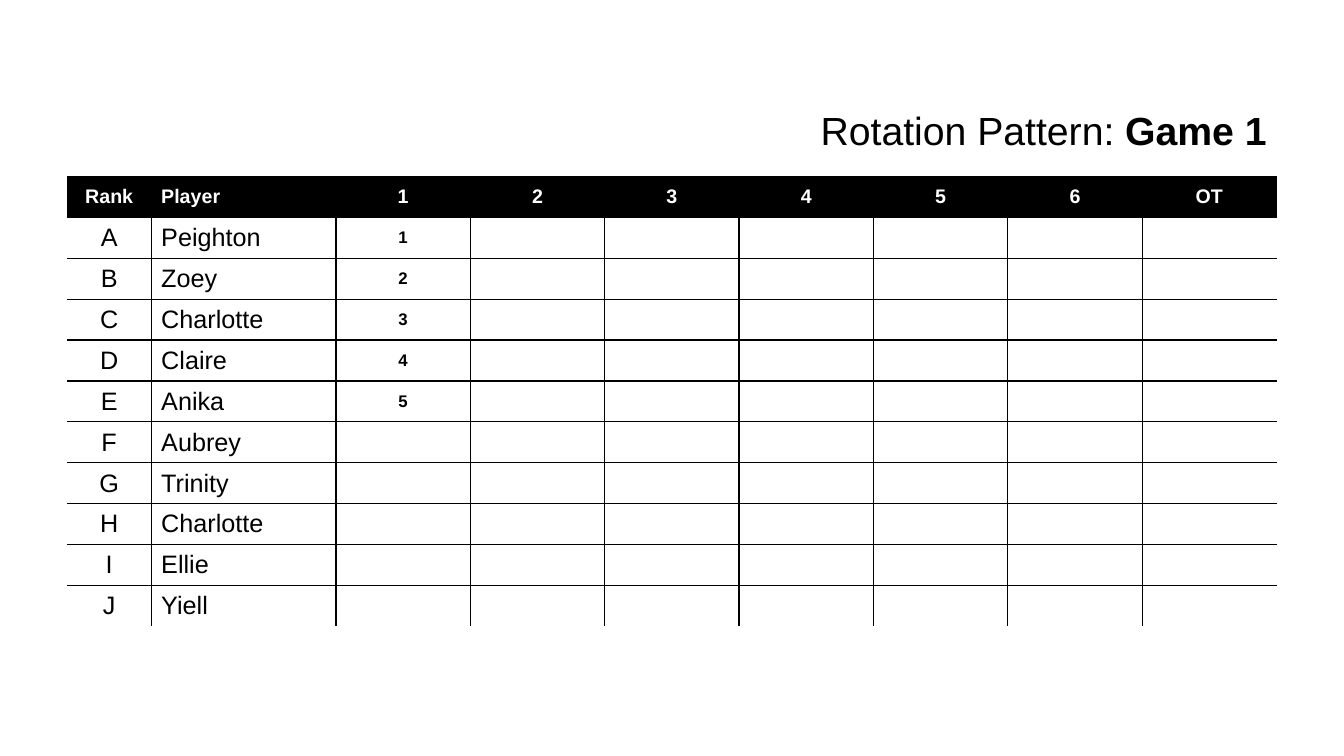
from lxml import etree
from pptx import Presentation
from pptx.dml.color import RGBColor
from pptx.enum.text import MSO_ANCHOR, MSO_AUTO_SIZE, PP_ALIGN
from pptx.oxml.ns import qn
from pptx.util import Emu, Pt

PX = 9525
FONT = "Arial"
COLORS = {"ink": "000000", "paper": "FFFFFF"}
LEFT, CENTER, RIGHT = PP_ALIGN.LEFT, PP_ALIGN.CENTER, PP_ALIGN.RIGHT
TOP, MIDDLE = MSO_ANCHOR.TOP, MSO_ANCHOR.MIDDLE
GROW = MSO_AUTO_SIZE.SHAPE_TO_FIT_TEXT

HEADERS = ["Rank", "Player", "1", "2", "3", "4", "5", "6", "OT"]
PLAYERS = ["Peighton", "Zoey", "Charlotte", "Claire", "Anika",
           "Aubrey", "Trinity", "Charlotte", "Ellie", "Yiell"]
RANKS = "ABCDEFGHIJ"
STARTERS = 5
COL_WIDTHS = [80, 176] + [128] * 7
ROW_HEIGHT = 39


def px(n):
    return Emu(n * PX)


def rgb(name):
    return RGBColor.from_string(COLORS[name])


def style_paragraph(p, size, color, bold, align):
    p.alignment = align
    p.font.name = FONT
    p.font.size = Pt(size)
    p.font.bold = bold
    p.font.color.rgb = rgb(color)


def add_title(s, label, game):
    title = s.shapes.title
    title.left, title.top, title.width, title.height = map(px, (376, 96, 840, 55))
    tf = title.text_frame
    tf.word_wrap = True
    tf.auto_size = GROW
    tf.vertical_anchor = TOP
    p = tf.paragraphs[0]
    style_paragraph(p, 28, "ink", False, RIGHT)
    p.add_run().text = label
    r = p.add_run()
    r.text = game
    r.font.bold = True


def set_borders(cell, inner_sides):
    tc_pr = cell._tc.get_or_add_tcPr()
    for i, side in enumerate("LRTB"):
        ln = etree.Element(qn(f"a:ln{side}"), w=str(Pt(1)))
        if side in inner_sides:
            fill = etree.SubElement(ln, qn("a:solidFill"))
            etree.SubElement(fill, qn("a:srgbClr"), val=COLORS["ink"])
        else:
            etree.SubElement(ln, qn("a:noFill"))
        tc_pr.insert(i, ln)


def fill_cell(cell, text, size, color, bold, align, background):
    cell.vertical_anchor = MIDDLE
    cell.fill.solid()
    cell.fill.fore_color.rgb = rgb(background)
    p = cell.text_frame.paragraphs[0]
    if text:
        p.text = text
    style_paragraph(p, size, color, bold, align)


def rotation_rows():
    rows = [HEADERS]
    for i, player in enumerate(PLAYERS):
        turn = str(i + 1) if i < STARTERS else ""
        rows.append([RANKS[i], player, turn] + [""] * 6)
    return rows


def add_rotation_table(s, rows):
    n_rows, n_cols = len(rows), len(COL_WIDTHS)
    frame = s.shapes.add_table(n_rows, n_cols, px(64), px(168),
                               px(sum(COL_WIDTHS)), px(ROW_HEIGHT * n_rows))
    table = frame.table
    table.horz_banding = False
    for column, width in zip(table.columns, COL_WIDTHS):
        column.width = px(width)
    for i, row in enumerate(rows):
        table.rows[i].height = px(ROW_HEIGHT)
        for j, text in enumerate(row):
            cell = table.cell(i, j)
            align = LEFT if j == 1 else CENTER
            if i == 0:
                fill_cell(cell, text, 14, "paper", True, align, "ink")
            else:
                size, bold = (18, False) if j < 2 else (12, True)
                fill_cell(cell, text, size, "ink", bold, align, "paper")
            inner = {"L": j > 0, "R": j < n_cols - 1, "T": i > 0, "B": i < n_rows - 1}
            set_borders(cell, [side for side in inner if inner[side]])


def main():
    prs = Presentation()
    prs.slide_width, prs.slide_height = px(1280), px(720)
    s = prs.slides.add_slide(prs.slide_layouts[5])
    add_rotation_table(s, rotation_rows())
    add_title(s, "Rotation Pattern:", " Game 1")
    prs.save("out.pptx")


if __name__ == "__main__":
    main()
